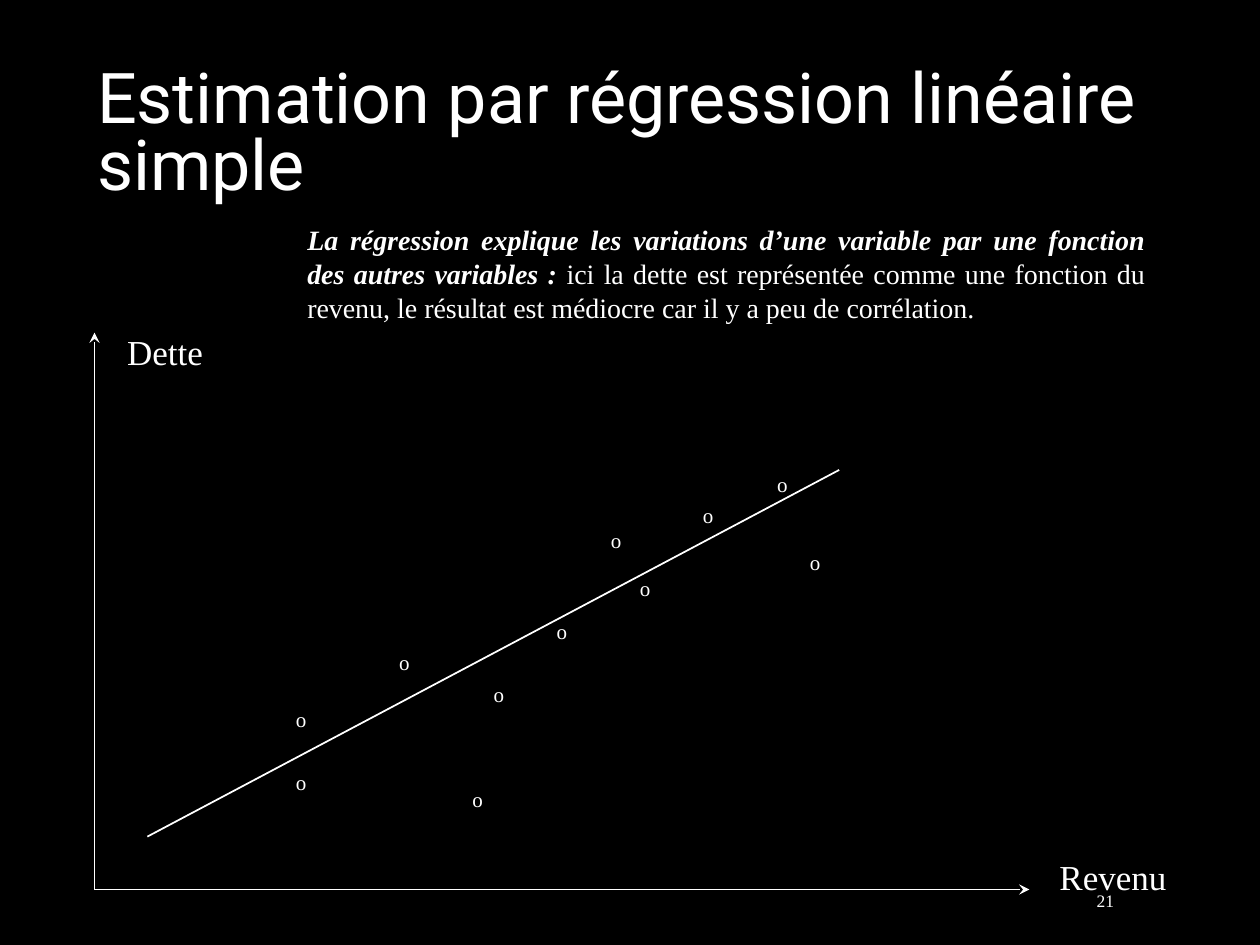
import pptx
import pptx.dml.color
import pptx.enum.shapes
import pptx.enum.text
import pptx.oxml
import pptx.oxml.ns
import pptx.util

ALIGN = pptx.enum.text.PP_ALIGN
ANCHOR = pptx.enum.text.MSO_ANCHOR
FIT = pptx.enum.text.MSO_AUTO_SIZE


def paint(color_format, value):
    color_format.rgb = pptx.dml.color.RGBColor.from_string(value)


def write(text, box, size=12, font="Times New Roman", strong=False,
          align=ALIGN.LEFT, anchor=ANCHOR.TOP, wrap=False, fit=FIT.SHAPE_TO_FIT_TEXT):
    frame = box.text_frame
    frame.word_wrap = wrap
    frame.auto_size = fit
    frame.vertical_anchor = anchor
    para = frame.paragraphs[0]
    para.alignment = align
    span = para.add_run()
    span.text = text
    span.font.size = pptx.util.Pt(size)
    span.font.name = font
    span.font.bold = span.font.italic = strong
    paint(span.font.color, "FFFFFF")
    return para


deck = pptx.Presentation()
deck.slide_width = pptx.util.Inches(10)
deck.slide_height = pptx.util.Inches(7.5)
column = deck.slide_width // 1000
row = deck.slide_height // 750

page = deck.slides.add_slide(deck.slide_layouts[5])
page.background.fill.solid()
paint(page.background.fill.fore_color, "000000")

title = page.shapes.title
title.left, title.top = 67 * column, 42 * row
title.width, title.height = 866 * column, 125 * row
heading = write("Estimation par régression linéaire simple", title, size=40, font="Roboto",
                anchor=ANCHOR.BOTTOM, wrap=True, fit=FIT.NONE)
heading.line_spacing = 0.8
heading.space_before = pptx.util.Pt(0)

number = page.shapes.add_textbox(794 * column, 700 * row, 100 * column, 30 * row)
write("21", number, size=10, align=ALIGN.RIGHT, anchor=ANCHOR.MIDDLE, wrap=True, fit=FIT.NONE)

origin = (75, 706)
lines = [
    (origin, (75, 264), True),
    (origin, (817, 706), True),
    ((117, 664), (666, 373), False),
]
for (x1, y1), (x2, y2), arrow in lines:
    line = page.shapes.add_connector(
        pptx.enum.shapes.MSO_CONNECTOR.STRAIGHT,
        x1 * column, y1 * row, x2 * column, y2 * row)
    line.line.width = pptx.util.Pt(1)
    line.line.fill.solid()
    paint(line.line.fill.fore_color, "FFFFFF")
    if arrow:
        tip = pptx.oxml.parse_xml(
            f'<a:tailEnd {pptx.oxml.ns.nsdecls("a")} type="stealth"/>')
        line.line._get_or_add_ln().append(tip)
    line._element.spPr.append(
        pptx.oxml.parse_xml(f'<a:effectLst {pptx.oxml.ns.nsdecls("a")}/>'))

points = [
    (225, 556), (225, 606), (307, 511), (365, 619), (382, 536), (432, 486),
    (475, 414), (498, 452), (548, 394), (607, 369), (633, 431),
]
for x, y in points:
    point = page.shapes.add_textbox(x * column, y * row, 28 * column, 30 * row)
    write("o", point)

for name, x, y, width in [("Dette", 91, 257, 81), ("Revenu", 831, 674, 106)]:
    label = page.shapes.add_textbox(x * column, y * row, width * column, 44 * row)
    write(name, label, size=20)

note = page.shapes.add_textbox(234 * column, 172 * row, 685 * column, 118 * row)
for text, strong in [
    ("La régression explique les variations d’une variable par une fonction "
     "des autres variables :", True),
    (" ici la dette est représentée comme une fonction du revenu, "
     "le résultat est médiocre car il y a peu de corrélation.", False),
]:
    write(text, note, size=16, strong=strong, align=ALIGN.JUSTIFY, wrap=True)

deck.save("out.pptx")
